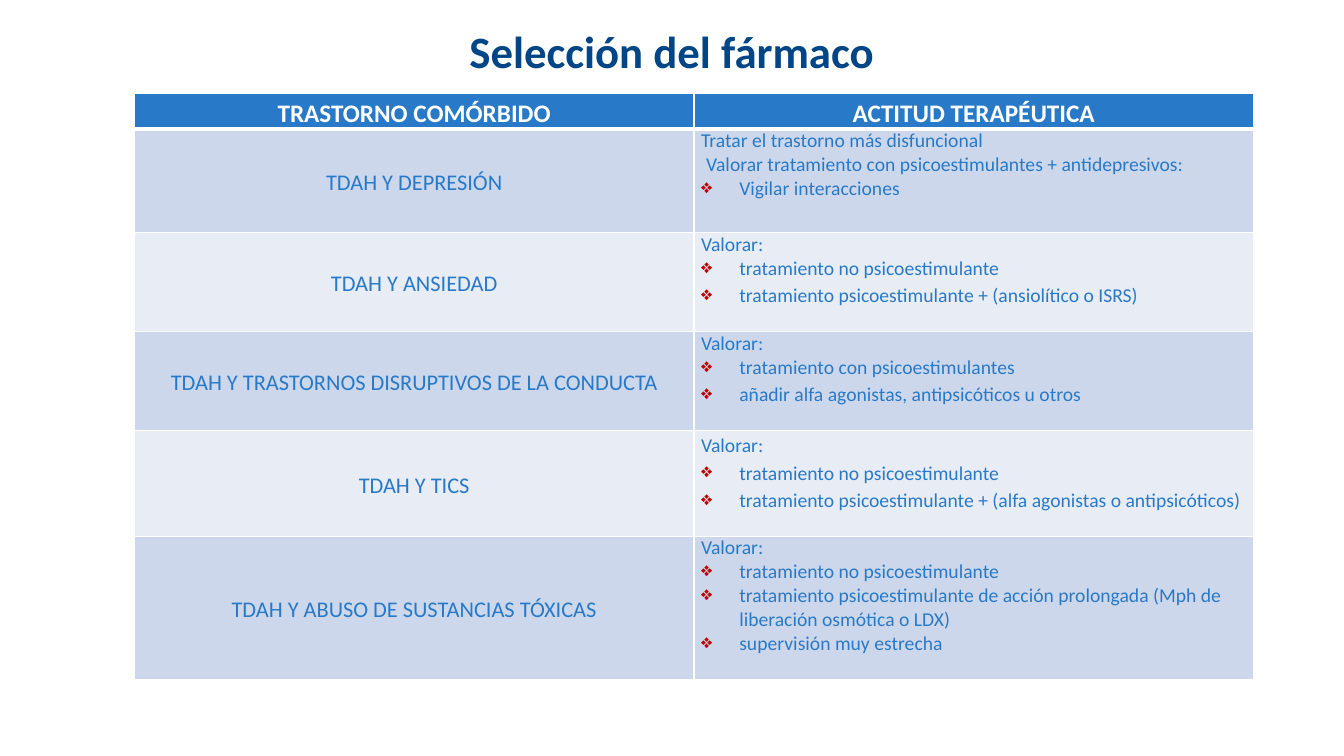
"""Build the slide on drug selection for ADHD with comorbid disorders."""
from dataclasses import dataclass

from lxml import etree
from pptx import Presentation
from pptx import util as u
from pptx.dml import color
from pptx.enum import text
from pptx.oxml import ns

WIDTH, HEIGHT = u.Inches(13.33), u.Inches(7.5)
FONT = "Calibri"
NAVY, BLUE, WHITE, RED = "004586", "287AC8", "FFFFFF", "C00000"
BANDS = ("CDD7EB", "E8ECF5")
HEADINGS = ("TRASTORNO COMÓRBIDO", "ACTITUD TERAPÉUTICA")
HEADING_HEIGHT = 0.35
LOOSE = 1.15
BULLET_INDENT = 0.38


@dataclass(frozen=True)
class Line:
    """One line of therapeutic advice."""
    wording: str
    bullet: bool = True
    spacing: float = 1.0
    indent: float = 0.0


@dataclass(frozen=True)
class Disorder:
    """A comorbid disorder, its advice and its row height in inches."""
    name: str
    height: float
    advice: tuple[Line, ...]


ASSESS = Line("Valorar:", bullet=False)
NO_STIMULANT = "tratamiento no psicoestimulante"
DISORDERS = (
    Disorder("TDAH Y DEPRESIÓN", 1.03, (
        Line("Tratar el trastorno más disfuncional", bullet=False),
        Line("Valorar tratamiento con psicoestimulantes + antidepresivos:", bullet=False, indent=0.05),
        Line("Vigilar interacciones"))),
    Disorder("TDAH Y ANSIEDAD", 0.98, (
        ASSESS,
        Line(NO_STIMULANT),
        Line("tratamiento psicoestimulante + (ansiolítico o ISRS)", spacing=LOOSE))),
    Disorder("TDAH Y TRASTORNOS DISRUPTIVOS DE LA CONDUCTA", 0.98, (
        ASSESS,
        Line("tratamiento con psicoestimulantes"),
        Line("añadir alfa agonistas, antipsicóticos u otros", spacing=LOOSE))),
    Disorder("TDAH Y TICS", 1.05, (
        Line("Valorar:", bullet=False, spacing=LOOSE),
        Line(NO_STIMULANT, spacing=LOOSE),
        Line("tratamiento psicoestimulante + (alfa agonistas o antipsicóticos)", spacing=LOOSE))),
    Disorder("TDAH Y ABUSO DE SUSTANCIAS TÓXICAS", 1.42, (
        ASSESS,
        Line(NO_STIMULANT),
        Line("tratamiento psicoestimulante de acción prolongada (Mph de liberación osmótica o LDX)"),
        Line("supervisión muy estrecha"))),
)


def rgb(value: str) -> color.RGBColor:
    """Turn a hex string into a colour."""
    return color.RGBColor.from_string(value)


def format_runs(paragraph, size: float, ink: str, bold: bool = False) -> None:
    """Set the font of every run of a paragraph."""
    for run in paragraph.runs:
        run.font.name, run.font.size, run.font.bold = FONT, u.Pt(size), bold
        run.font.color.rgb = rgb(ink)


def add_bullet(paragraph) -> None:
    """Give a paragraph a hanging red diamond bullet."""
    properties = paragraph._p.get_or_add_pPr()
    properties.set("marL", str(u.Inches(BULLET_INDENT)))
    properties.set("indent", str(-u.Inches(BULLET_INDENT)))
    bullet_color = etree.SubElement(properties, ns.qn("a:buClr"))
    etree.SubElement(bullet_color, ns.qn("a:srgbClr"), val=RED)
    etree.SubElement(properties, ns.qn("a:buChar"), char="❖")


def style_cell(cell, fill: str, anchor: text.MSO_ANCHOR, bottom_line: float = 1) -> None:
    """Set the margins, white borders and fill of a cell."""
    cell.margin_left = cell.margin_right = u.Inches(0.07)
    cell.margin_top = cell.margin_bottom = 0
    cell.vertical_anchor = anchor
    properties = cell._tc.get_or_add_tcPr()
    for side, points in (("L", 1), ("R", 1), ("T", 1), ("B", bottom_line)):
        border = etree.SubElement(properties, ns.qn(f"a:ln{side}"), w=str(u.Pt(points)))
        border_fill = etree.SubElement(border, ns.qn("a:solidFill"))
        etree.SubElement(border_fill, ns.qn("a:srgbClr"), val=WHITE)
    cell.fill.solid()
    cell.fill.fore_color.rgb = rgb(fill)


def write_label(cell, wording: str, size: float, ink: str, bold: bool = False) -> None:
    """Write one centred line in a cell."""
    cell.text_frame.text = wording
    label = cell.text_frame.paragraphs[0]
    label.alignment = text.PP_ALIGN.CENTER
    label.line_spacing = LOOSE
    format_runs(label, size, ink, bold)


def write_advice(cell, advice: tuple[Line, ...]) -> None:
    """Write the lines of advice in a cell."""
    cell.text_frame.text = "\n".join(line.wording for line in advice)
    for paragraph, line in zip(cell.text_frame.paragraphs, advice):
        paragraph.line_spacing = line.spacing
        if line.bullet:
            add_bullet(paragraph)
        elif line.indent:
            paragraph._p.get_or_add_pPr().set("marL", str(u.Inches(line.indent)))
        format_runs(paragraph, 14, BLUE)


def add_title(slide) -> None:
    """Write the slide title across the top."""
    title = slide.shapes.add_textbox(
        int(WIDTH * 0.05), int(HEIGHT * 0.023), int(WIDTH * 0.9), int(HEIGHT * 0.088)).text_frame
    title.word_wrap = True
    title.vertical_anchor = text.MSO_ANCHOR.MIDDLE
    title.text = "Selección del fármaco"
    title.paragraphs[0].alignment = text.PP_ALIGN.CENTER
    format_runs(title.paragraphs[0], 32, NAVY, bold=True)


def add_disorder_table(slide) -> None:
    """Draw the table of disorders and advice."""
    heights = [HEADING_HEIGHT, *(disorder.height for disorder in DISORDERS)]
    table = slide.shapes.add_table(
        len(heights), len(HEADINGS), int(WIDTH * 0.1), int(HEIGHT * 0.124),
        u.Inches(11.1), u.Inches(sum(heights))).table
    table.horz_banding = False
    for row, height in zip(table.rows, heights):
        row.height = u.Inches(height)
    for column, heading in enumerate(HEADINGS):
        cell = table.cell(0, column)
        style_cell(cell, BLUE, text.MSO_ANCHOR.MIDDLE, bottom_line=3)
        write_label(cell, heading, 18, WHITE, bold=True)
    for index, disorder in enumerate(DISORDERS):
        name_cell, advice_cell = table.cell(index + 1, 0), table.cell(index + 1, 1)
        band = BANDS[index % len(BANDS)]
        style_cell(name_cell, band, text.MSO_ANCHOR.MIDDLE)
        write_label(name_cell, disorder.name, 16, BLUE)
        style_cell(advice_cell, band, text.MSO_ANCHOR.TOP)
        write_advice(advice_cell, disorder.advice)


def main() -> None:
    """Build and save the slide."""
    deck = Presentation()
    deck.slide_width, deck.slide_height = WIDTH, HEIGHT
    slide = deck.slides.add_slide(deck.slide_layouts[6])
    add_title(slide)
    add_disorder_table(slide)
    deck.save("out.pptx")


if __name__ == "__main__":
    main()
